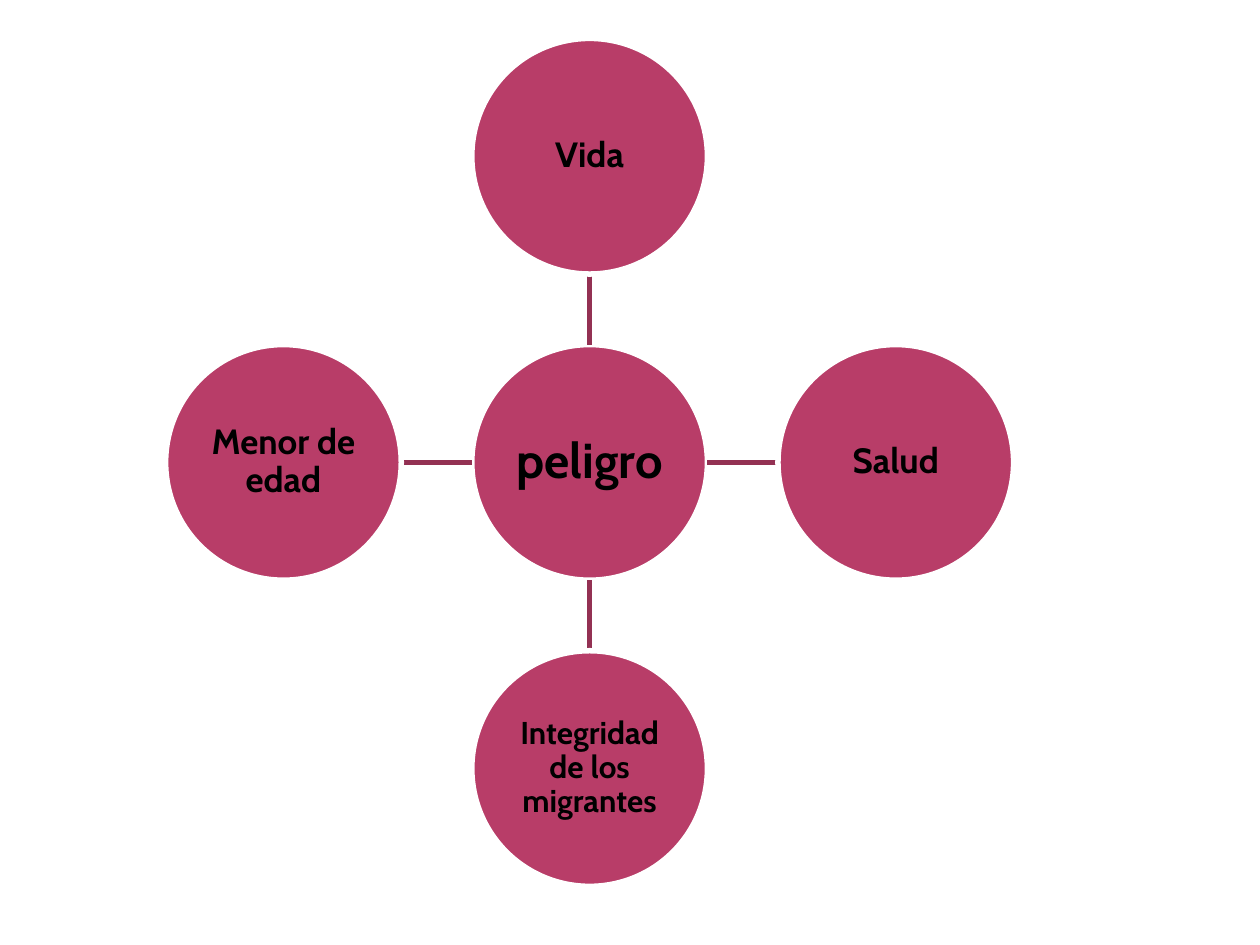
from lxml import etree
from pptx import Presentation
from pptx.dml.color import RGBColor
from pptx.enum.shapes import MSO_CONNECTOR, MSO_SHAPE
from pptx.enum.text import MSO_ANCHOR, PP_ALIGN
from pptx.oxml.ns import qn
from pptx.util import Inches, Pt

STRAIGHT = MSO_CONNECTOR.STRAIGHT
OVAL = MSO_SHAPE.OVAL
MIDDLE = MSO_ANCHOR.MIDDLE
CENTER = PP_ALIGN.CENTER


def color(hex_string):
    return RGBColor.from_string(hex_string)


class RadialDiagram:
    font = "Cabin"
    fill = "B83D68"
    outline = "FFFFFF"
    link_color = "933153"
    text_color = "000000"
    line_width = Pt(3.15)
    center_x, center_y = 4.68, 3.67
    step = 2.43
    diameter = 1.87

    def __init__(self, slide):
        self.slide = slide

    def point(self, column, row):
        return (Inches(self.center_x + column * self.step),
                Inches(self.center_y + row * self.step))

    def circle(self, text, column, row, size, inset=0.01):
        x, y = self.point(column, row)
        diameter = Inches(self.diameter)
        shape = self.slide.shapes.add_shape(
            OVAL, x - diameter // 2, y - diameter // 2, diameter, diameter)
        shape.shadow.inherit = False
        shape.fill.solid()
        shape.fill.fore_color.rgb = color(self.fill)
        shape.line.color.rgb = color(self.outline)
        shape.line.width = self.line_width
        frame = shape.text_frame
        frame.word_wrap = True
        frame.vertical_anchor = MIDDLE
        frame.margin_left = frame.margin_right = Inches(inset)
        frame.margin_top = frame.margin_bottom = Inches(inset)
        paragraph = frame.paragraphs[0]
        paragraph.text = text
        paragraph.alignment = CENTER
        paragraph.line_spacing = 0.9
        paragraph.font.name = self.font
        paragraph.font.size = Pt(size)
        paragraph.font.bold = True
        paragraph.font.color.rgb = color(self.text_color)

    def link(self, column, row):
        near = self.diameter / 2 / self.step
        far = 1 - near
        connector = self.slide.shapes.add_connector(
            STRAIGHT, *self.point(column * near, row * near),
            *self.point(column * far, row * far))
        connector.line.color.rgb = color(self.link_color)
        connector.line.width = self.line_width
        etree.SubElement(connector._element.spPr, qn("a:effectLst"))


def main():
    presentation = Presentation()
    presentation.slide_width = Inches(10)
    presentation.slide_height = Inches(7.5)
    slide = presentation.slides.add_slide(presentation.slide_layouts[6])

    diagram = RadialDiagram(slide)
    diagram.circle("peligro", 0, 0, 28, inset=0.02)
    risks = [
        ("Vida", 0, -1, 20),
        ("Salud", 1, 0, 20),
        ("Integridad de los migrantes", 0, 1, 18),
        ("Menor de edad", -1, 0, 20),
    ]
    for text, column, row, size in risks:
        diagram.link(column, row)
        diagram.circle(text, column, row, size)

    presentation.save("out.pptx")


if __name__ == "__main__":
    main()
